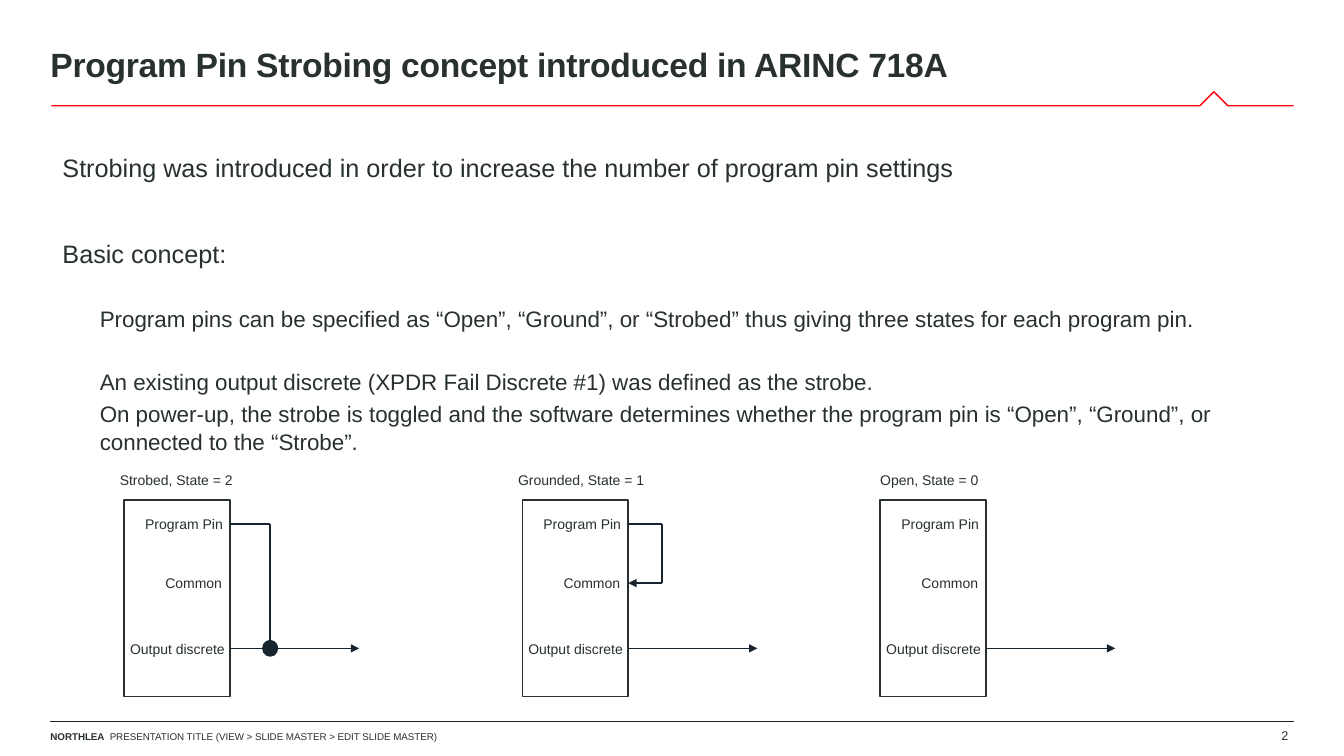
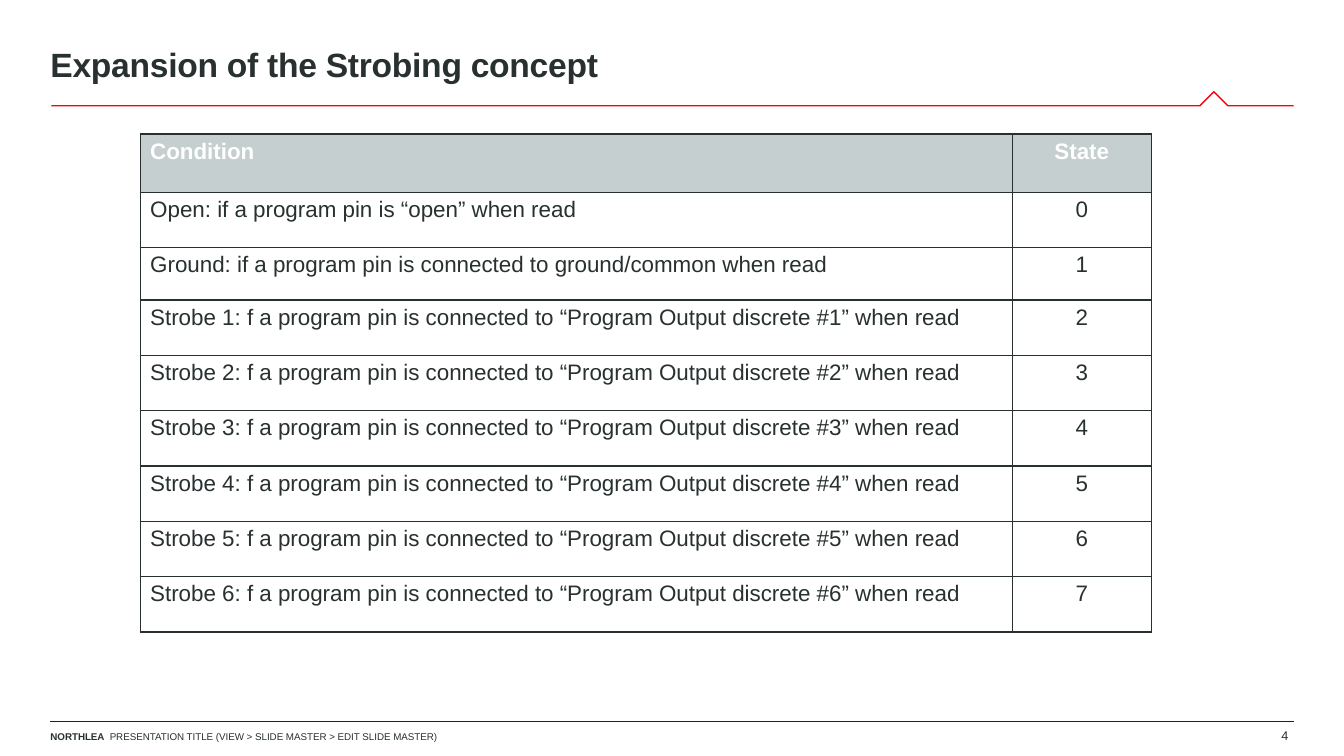
from dataclasses import dataclass
from itertools import pairwise

from lxml import etree
from pptx import Presentation
from pptx.dml.color import RGBColor
from pptx.enum.shapes import MSO_CONNECTOR, MSO_SHAPE
from pptx.enum.text import MSO_ANCHOR, PP_ALIGN
from pptx.oxml.ns import qn
from pptx.util import Inches, Pt

STRAIGHT = MSO_CONNECTOR.STRAIGHT
RECTANGLE, OVAL = MSO_SHAPE.RECTANGLE, MSO_SHAPE.OVAL
TOP, MIDDLE = MSO_ANCHOR.TOP, MSO_ANCHOR.MIDDLE
LEFT, CENTER = PP_ALIGN.LEFT, PP_ALIGN.CENTER

FONT = "Arial"
COLORS = {
    "text": "283030",
    "line": "172430",
    "accent": "FF000A",
    "header": "C5CFCF",
    "white": "FFFFFF",
}
DEFAULT_INSETS = (0.1, 0.05)
BRAND = "NORTHLEA"
FOOTER = "PRESENTATION TITLE (VIEW > SLIDE MASTER > EDIT SLIDE MASTER)"

# Text, size, indent in inches, space before in points
BODY = [
    ("Strobing was introduced in order to increase the number of program pin settings", 18, 0, 0),
    ("Basic concept:", 18, 0, 39),
    ("Program pins can be specified as “Open”, “Ground”, or “Strobed” thus giving "
     "three states for each program pin.", 16, 0.37, 25),
    ("An existing output discrete (XPDR Fail Discrete #1) was defined as the strobe.", 16, 0.37, 25),
    ("On power-up, the strobe is toggled and the software determines whether the program pin "
     "is “Open”, “Ground”, or connected to the “Strobe”.", 16, 0.37, 3),
]
CONDITIONS = [
    "Open: if a program pin is “open” when read",
    "Ground: if a program pin is connected to ground/common when read",
] + [
    f"Strobe {number}: f a program pin is connected to “Program Output discrete #{number}” when read"
    for number in range(1, 7)
]

# Rows of a pin block, as percentages of its height
PIN_ROW, COMMON_ROW, OUTPUT_ROW = 12.3, 42.3, 75.5
PIN_LABELS = [
    ("Program Pin", 20, PIN_ROW),
    ("Common", 39, COMMON_ROW),
    ("Output discrete", 5.7, OUTPUT_ROW),
]


@dataclass
class Box:
    """An area in inches, whose inner areas are given as percentages of it."""
    left: float
    top: float
    width: float
    height: float

    def point(self, x, y):
        return (Inches(self.left + self.width * x / 100),
                Inches(self.top + self.height * y / 100))

    def area(self, x, y, width, height):
        return Box(self.left + self.width * x / 100, self.top + self.height * y / 100,
                   self.width * width / 100, self.height * height / 100)

    def emu(self):
        return [Inches(value) for value in (self.left, self.top, self.width, self.height)]


PAGE = Box(0, 0, 13.33, 7.5)


def rgb(name):
    return RGBColor.from_string(COLORS[name])


def style_paragraph(paragraph, size, color="text", bold=False, align=LEFT):
    paragraph.alignment = align
    font = paragraph.font
    font.name, font.size, font.bold = FONT, Pt(size), bold
    font.color.rgb = rgb(color)


def add_text_frame(slide, box, anchor=TOP, insets=(0, 0)):
    frame = slide.shapes.add_textbox(*box.emu()).text_frame
    frame.word_wrap = True
    frame.vertical_anchor = anchor
    frame.margin_left = frame.margin_right = Inches(insets[0])
    frame.margin_top = frame.margin_bottom = Inches(insets[1])
    return frame


def add_label(slide, box, text, size, bold=False, anchor=TOP, insets=(0, 0)):
    paragraph = add_text_frame(slide, box, anchor, insets).paragraphs[0]
    paragraph.add_run().text = text
    style_paragraph(paragraph, size, bold=bold)
    return paragraph


def add_line(slide, start, end, weight=1.0, arrow=False):
    connector = slide.shapes.add_connector(STRAIGHT, *start, *end)
    connector.line.color.rgb = rgb("line")
    connector.line.width = Pt(weight)
    properties = connector._element.spPr
    if arrow:
        etree.SubElement(properties.find(qn("a:ln")), qn("a:tailEnd"), type="triangle")
    etree.SubElement(properties, qn("a:effectLst"))


def add_title(slide, page, text):
    paragraph = add_label(slide, page.area(3.75, 4.27, 81.92, 9.33), text, 24, True, MIDDLE)
    paragraph.line_spacing = 0.85
    paragraph.runs[0]._r.get_or_add_rPr().set("spc", "-20")


def add_accent_line(slide, page):
    """Draw the red rule with its peak under the title."""
    corners = [(96.25, 14), (91.37, 14), (90.32, 12.13), (89.27, 14), (3.83, 14)]
    start, *others = [page.point(*corner) for corner in corners]
    builder = slide.shapes.build_freeform(*start)
    builder.add_line_segments(others, close=False)
    rule = builder.convert_to_shape()
    rule.shadow.inherit = False
    rule.fill.background()
    rule.line.color.rgb = rgb("accent")
    rule.line.width = Pt(1)


def add_footer(slide, page, number):
    add_line(slide, page.point(3.75, 95.33), page.point(96.25, 95.33), 0.25)
    add_label(slide, page.area(3.75, 96.67, 5.62, 2), BRAND, 7, bold=True)
    add_label(slide, page.area(7.43, 96, 30.68, 2.93), FOOTER, 7,
              anchor=MIDDLE, insets=DEFAULT_INSETS)
    add_label(slide, page.area(94.6, 95.33, 2.5, 3.87), str(number), 9,
              anchor=MIDDLE, insets=DEFAULT_INSETS)


def add_framed_slide(presentation, title, number):
    """Add a blank slide with the title, rule and footer that all slides share."""
    slide = presentation.slides.add_slide(presentation.slide_layouts[6])
    add_accent_line(slide, PAGE)
    add_title(slide, PAGE, title)
    add_footer(slide, PAGE, number)
    return slide


def add_body(slide, box):
    frame = add_text_frame(slide, box)
    for index, (text, size, indent, space) in enumerate(BODY):
        paragraph = frame.add_paragraph() if index else frame.paragraphs[0]
        paragraph.text = text
        paragraph.line_spacing = 1.04
        paragraph.space_before = Pt(space)
        if indent:
            properties = paragraph._p.get_or_add_pPr()
            properties.set("marL", str(Inches(indent)))
            properties.set("indent", "0")
        style_paragraph(paragraph, size)


def add_pin_block(slide, box, title, title_shift, wire=(), wire_arrow=False):
    """Draw a unit with its three pins, and a wire through the given points."""
    add_label(slide, box.area(title_shift, -14.4, 135, 8.5), title, 10)
    unit = slide.shapes.add_shape(RECTANGLE, *box.emu())
    unit.shadow.inherit = False
    unit.fill.background()
    unit.line.color.rgb = rgb("text")
    unit.line.width = Pt(1)
    for text, x, row in PIN_LABELS:
        add_label(slide, box.area(x, row - 4.2, 94.3, 8.5), text, 10)
    add_line(slide, box.point(100, OUTPUT_ROW), box.point(222, OUTPUT_ROW), arrow=True)
    for start, end in pairwise(wire):
        is_last = end == wire[-1]
        add_line(slide, box.point(*start), box.point(*end), arrow=wire_arrow and is_last)


def add_junction(slide, box, x, y):
    dot = slide.shapes.add_shape(OVAL, *box.area(x - 7.6, y - 4.3, 15.2, 8.6).emu())
    dot.shadow.inherit = False
    dot.fill.solid()
    dot.fill.fore_color.rgb = rgb("line")
    dot.line.fill.background()


def add_pin_diagram(slide, page):
    strobed, grounded, opened = [page.area(x, 66.13, 7.88, 26) for x in (9.23, 38.86, 65.49)]
    strobe_x, ground_x = 138, 132
    add_pin_block(slide, strobed, "Strobed, State = 2", -4,
                  [(100, PIN_ROW), (strobe_x, PIN_ROW), (strobe_x, OUTPUT_ROW)])
    add_junction(slide, strobed, strobe_x, OUTPUT_ROW)
    add_pin_block(slide, grounded, "Grounded, State = 1", -4,
                  [(100, PIN_ROW), (ground_x, PIN_ROW), (ground_x, COMMON_ROW),
                   (100, COMMON_ROW)], wire_arrow=True)
    add_pin_block(slide, opened, "Open, State = 0", 0)


def set_borders(cell):
    properties = cell._tc.get_or_add_tcPr()
    for side in ("lnL", "lnR", "lnT", "lnB"):
        border = etree.SubElement(properties, qn(f"a:{side}"), w=str(Pt(1)))
        fill = etree.SubElement(border, qn("a:solidFill"))
        etree.SubElement(fill, qn("a:srgbClr"), val=COLORS["text"])


def fill_cell(cell, text, is_header, align):
    set_borders(cell)
    if is_header:
        cell.fill.solid()
        cell.fill.fore_color.rgb = rgb("header")
    else:
        cell.fill.background()
    cell.text = text
    style_paragraph(cell.text_frame.paragraphs[0], 16,
                    "white" if is_header else "text", is_header, align)


def add_state_table(slide, box):
    rows = [("Condition", "State")]
    rows += [(condition, str(state)) for state, condition in enumerate(CONDITIONS)]
    table = slide.shapes.add_table(len(rows), 2, *box.emu()).table
    table.horz_banding = False
    for column, share in zip(table.columns, (86.24, 13.76)):
        column.width = Inches(box.width * share / 100)
    weights = [58, 55, 52] + [55] * (len(rows) - 3)
    for index, (values, weight) in enumerate(zip(rows, weights)):
        table.rows[index].height = Inches(box.height * weight / sum(weights))
        for column, (text, align) in enumerate(zip(values, (LEFT, CENTER))):
            fill_cell(table.cell(index, column), text, index == 0, align)


def main():
    presentation = Presentation()
    presentation.slide_width = Inches(PAGE.width)
    presentation.slide_height = Inches(PAGE.height)

    concept = add_framed_slide(
        presentation, "Program Pin Strobing concept introduced in ARINC 718A", 2)
    add_body(concept, PAGE.area(4.65, 20, 92.5, 40))
    add_pin_diagram(concept, PAGE)

    expansion = add_framed_slide(presentation, "Expansion of the Strobing concept", 4)
    add_state_table(expansion, PAGE.area(10.43, 17.73, 75.24, 65.87))

    presentation.save("out.pptx")


if __name__ == "__main__":
    main()
